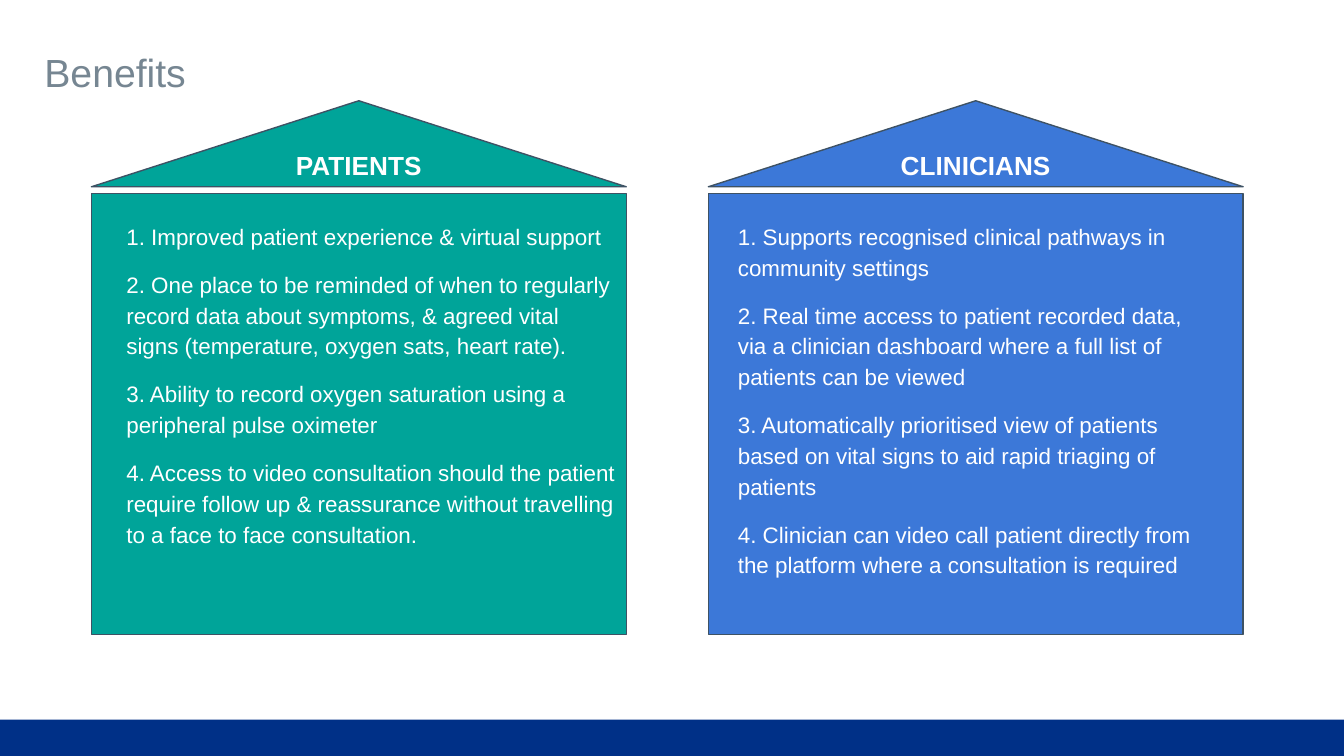
"""Build the Benefits slide: two house-shaped panels for patients and clinicians."""
from pptx import Presentation
from pptx.dml.color import RGBColor
from pptx.enum.shapes import MSO_SHAPE
from pptx.enum.text import MSO_ANCHOR, PP_ALIGN
from pptx.util import Inches, Pt

COLORS = {
    "title": "768692",
    "footer": "003087",
    "patients": "00A499",
    "clinicians": "3C78D8",
    "outline": "3E5264",
    "text": "FFFFFF",
}
TITLE = "Benefits"
HOUSES = [
    {
        "heading": "PATIENTS",
        "color": "patients",
        "left": 0.68,
        "text_box": (0.87, 1.56, 3.79, 3.04),
        "benefits": [
            "1. Improved patient experience & virtual support",
            "2. One place to be reminded of when to regularly record data about symptoms, "
            "& agreed vital signs (temperature, oxygen sats, heart rate).",
            "3. Ability to record oxygen saturation using a peripheral pulse oximeter",
            "4. Access to video consultation should the patient require follow up & "
            "reassurance without travelling to a face to face consultation.",
        ],
    },
    {
        "heading": "CLINICIANS",
        "color": "clinicians",
        "left": 5.27,
        "text_box": (5.42, 1.56, 3.69, 3.04),
        "benefits": [
            "1. Supports recognised clinical pathways in community settings",
            "2. Real time access to patient recorded data, via a clinician dashboard "
            "where a full list of patients can be viewed",
            "3. Automatically prioritised view of patients based on vital signs to aid "
            "rapid triaging of patients",
            "4. Clinician can video call patient directly from the platform where a "
            "consultation is required",
        ],
    },
]
SLIDE_W = 10
SLIDE_H = SLIDE_W * 9 / 16
FOOTER_H = 0.27
HOUSE_W = 3.98
ROOF_TOP, ROOF_H = 0.75, 0.64
WALL_TOP, WALL_H = 1.44, 3.28


def rgb(name):
    return RGBColor.from_string(COLORS[name])


def add_block(s, kind, box, fill, outline=None):
    sp = s.shapes.add_shape(kind, *map(Inches, box))
    sp.shadow.inherit = False
    sp.fill.solid()
    sp.fill.fore_color.rgb = rgb(fill)
    if outline:
        sp.line.color.rgb = rgb(outline)
        sp.line.width = Pt(0.75)
    else:
        sp.line.fill.background()
    return sp


def set_frame(tf, anchor, side=0.07, end=0.07):
    tf.word_wrap = True
    tf.vertical_anchor = anchor
    tf.margin_left = tf.margin_right = Inches(side)
    tf.margin_top = tf.margin_bottom = Inches(end)


def add_run(p, text, size, color="text", bold=False):
    r = p.add_run()
    r.text = text
    r.font.name = "Arial"
    r.font.size = Pt(size)
    r.font.bold = bold
    r.font.color.rgb = rgb(color)


def add_title(s):
    sp = s.shapes.title
    sp.left, sp.top, sp.width, sp.height = map(Inches, (0.26, 0.24, 9.48, 0.64))
    set_frame(sp.text_frame, MSO_ANCHOR.MIDDLE, end=0.04)
    p = sp.text_frame.paragraphs[0]
    p.alignment = PP_ALIGN.LEFT
    p.line_spacing = 0.9
    add_run(p, TITLE, 21, "title")


def add_house(s, house):
    left, color = house["left"], house["color"]
    add_block(s, MSO_SHAPE.RECTANGLE, (left, WALL_TOP, HOUSE_W, WALL_H), color, "outline")
    roof = add_block(s, MSO_SHAPE.ISOSCELES_TRIANGLE,
                     (left, ROOF_TOP, HOUSE_W, ROOF_H), color, "outline")
    set_frame(roof.text_frame, MSO_ANCHOR.MIDDLE)
    p = roof.text_frame.paragraphs[0]
    p.alignment = PP_ALIGN.CENTER
    add_run(p, house["heading"], 14, bold=True)

    tf = s.shapes.add_textbox(*map(Inches, house["text_box"])).text_frame
    set_frame(tf, MSO_ANCHOR.TOP)
    for i, benefit in enumerate(house["benefits"]):
        p = tf.add_paragraph() if i else tf.paragraphs[0]
        p.line_spacing = 1.15
        p.space_before = Pt(9 if i else 0)
        add_run(p, benefit, 12)


def main():
    prs = Presentation()
    prs.slide_width, prs.slide_height = Inches(SLIDE_W), Inches(SLIDE_H)
    s = prs.slides.add_slide(prs.slide_layouts[5])
    add_block(s, MSO_SHAPE.RECTANGLE,
              (0, SLIDE_H - FOOTER_H, SLIDE_W, FOOTER_H), "footer")
    add_title(s)
    for house in HOUSES:
        add_house(s, house)
    prs.save("out.pptx")


if __name__ == "__main__":
    main()
